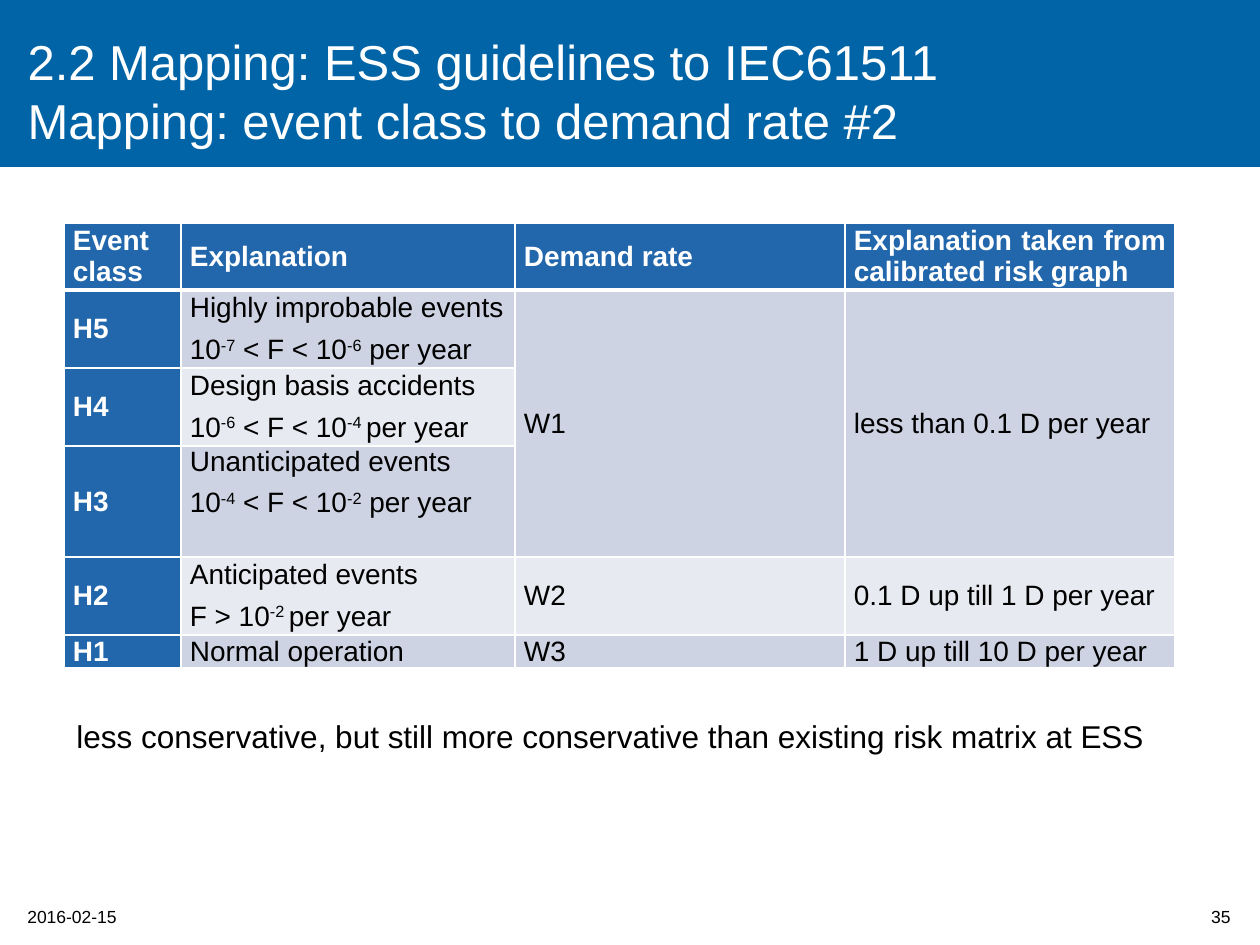
from lxml import etree
from pptx import Presentation
from pptx.dml.color import RGBColor
from pptx.enum.shapes import MSO_SHAPE
from pptx.enum.text import MSO_ANCHOR, MSO_AUTO_SIZE, PP_ALIGN
from pptx.oxml.ns import qn
from pptx.util import Pt

EMU_PER_PX = 914400 / 126
RECTANGLE = MSO_SHAPE.RECTANGLE
TOP, MIDDLE = MSO_ANCHOR.TOP, MSO_ANCHOR.MIDDLE
LEFT, RIGHT, JUSTIFY = PP_ALIGN.LEFT, PP_ALIGN.RIGHT, PP_ALIGN.JUSTIFY
NO_AUTOFIT = MSO_AUTO_SIZE.NONE

FONT = "Arial"
WHITE, BLACK = "FFFFFF", "000000"
BAND_BLUE, HEADER_BLUE = "0064A6", "2266AB"
ROW_FILLS = ("CDD3E2", "E8EAF1")

COLUMN_WIDTHS = (117, 334, 330, 330)
ROW_HEIGHTS = (67, 78, 78, 111, 78, 33)
HEADERS = ("Event class", "Explanation", "Demand rate",
           "Explanation taken from calibrated risk graph")
# Text between carets is superscript.
EVENT_ROWS = (
    ("H5", "Highly improbable events\n10^-7^ < F < 10^-6^ per year",
     "W1", "less than 0.1 D per year"),
    ("H4", "Design basis accidents\n10^-6^ < F < 10^-4 ^per year", "", ""),
    ("H3", "Unanticipated events\n10^-4^ < F < 10^-2^ per year", "", ""),
    ("H2", "Anticipated events\nF > 10^-2 ^per year",
     "W2", "0.1 D up till 1 D per year"),
    ("H1", "Normal operation", "W3", "1 D up till 10 D per year"),
)
MERGED_ROWS = (1, 3)
TOP_ANCHORED_ROW = 3


def px(length):
    return round(length * EMU_PER_PX)


def color(hex_value):
    return RGBColor.from_string(hex_value)


def format_font(font, size, hex_value, bold=False):
    font.name = FONT
    font.size = Pt(size)
    font.bold = bold
    font.color.rgb = color(hex_value)


def add_band(slide, width, height):
    band = slide.shapes.add_shape(RECTANGLE, 0, 0, px(width), px(height))
    band.shadow.inherit = False
    band.fill.solid()
    band.fill.fore_color.rgb = color(BAND_BLUE)
    band.line.fill.background()
    return band


def fill_title(title, text, left, top, width, height):
    title.left, title.top = px(left), px(top)
    title.width, title.height = px(width), px(height)
    frame = title.text_frame
    frame.text = text
    frame.auto_size = NO_AUTOFIT
    frame.vertical_anchor = MIDDLE
    for paragraph in frame.paragraphs:
        paragraph.alignment = LEFT
        for run in paragraph.runs:
            format_font(run.font, 28, WHITE)


def add_label(slide, text, left, top, width, height, size,
              alignment=LEFT, anchor=TOP):
    box = slide.shapes.add_textbox(px(left), px(top), px(width), px(height))
    frame = box.text_frame
    frame.word_wrap = True
    frame.vertical_anchor = anchor
    frame.text = text
    paragraph = frame.paragraphs[0]
    paragraph.alignment = alignment
    format_font(paragraph.runs[0].font, size, BLACK)


def set_borders(cell, top_width, bottom_width):
    properties = cell._tc.get_or_add_tcPr()
    widths = {"a:lnL": 1, "a:lnR": 1, "a:lnT": top_width, "a:lnB": bottom_width}
    for tag, width in widths.items():
        line = etree.SubElement(properties, qn(tag), w=str(Pt(width)))
        fill = etree.SubElement(line, qn("a:solidFill"))
        etree.SubElement(fill, qn("a:srgbClr"), val=WHITE)


def write_cell_text(cell, text, hex_value, bold):
    frame = cell.text_frame
    for index, line in enumerate(text.split("\n")):
        paragraph = frame.add_paragraph() if index else frame.paragraphs[0]
        paragraph.alignment = JUSTIFY
        paragraph.space_before = Pt(3 if index else 0)
        paragraph.space_after = Pt(3)
        format_font(paragraph.font, 16, hex_value, bold)
        for part_index, part in enumerate(line.split("^")):
            if not part:
                continue
            run = paragraph.add_run()
            run.text = part
            format_font(run.font, 16, hex_value, bold)
            if part_index % 2:
                run._r.get_or_add_rPr().set("baseline", "30000")


def format_cell(cell, row, column, text):
    is_heading = row == 0 or column == 0
    set_borders(cell, 3 if row == 1 else 1, 3 if row == 0 else 1)
    cell.fill.solid()
    cell.fill.fore_color.rgb = color(
        HEADER_BLUE if is_heading else ROW_FILLS[(row - 1) % 2])
    cell.margin_left = cell.margin_right = px(9)
    cell.margin_top = cell.margin_bottom = 0
    is_top = row == TOP_ANCHORED_ROW and column == 1
    cell.vertical_anchor = TOP if is_top else MIDDLE
    write_cell_text(cell, text, WHITE if is_heading else BLACK, is_heading)


def add_event_table(slide, left, top):
    rows = (HEADERS,) + EVENT_ROWS
    table = slide.shapes.add_table(
        len(rows), len(HEADERS), px(left), px(top),
        px(sum(COLUMN_WIDTHS)), px(sum(ROW_HEIGHTS))).table
    for column, width in zip(table.columns, COLUMN_WIDTHS):
        column.width = px(width)
    for row, height in zip(table.rows, ROW_HEIGHTS):
        row.height = px(height)
    for row_index, texts in enumerate(rows):
        for column_index, text in enumerate(texts):
            format_cell(table.cell(row_index, column_index),
                        row_index, column_index, text)
    first, last = MERGED_ROWS
    for column_index in (2, 3):
        table.cell(first, column_index).merge(table.cell(last, column_index))


def main():
    presentation = Presentation()
    presentation.slide_width, presentation.slide_height = px(1260), px(945)
    slide = presentation.slides.add_slide(presentation.slide_layouts[5])
    title = slide.shapes.title
    band = add_band(slide, 1260, 167)
    title.element.addprevious(band.element)
    fill_title(title, "2.2 Mapping: ESS guidelines to IEC61511\n"
               "Mapping: event class to demand rate #2", 15, 26, 953, 129)
    add_event_table(slide, 64, 223)
    add_label(slide, "less conservative, but still more conservative than "
              "existing risk matrix at ESS", 64, 711, 1111, 50, 18)
    add_label(slide, "2016-02-15", 15, 900, 208, 34, 10)
    add_label(slide, "35", 1152, 892, 91, 50, 10, RIGHT, MIDDLE)
    presentation.save("out.pptx")


if __name__ == "__main__":
    main()
